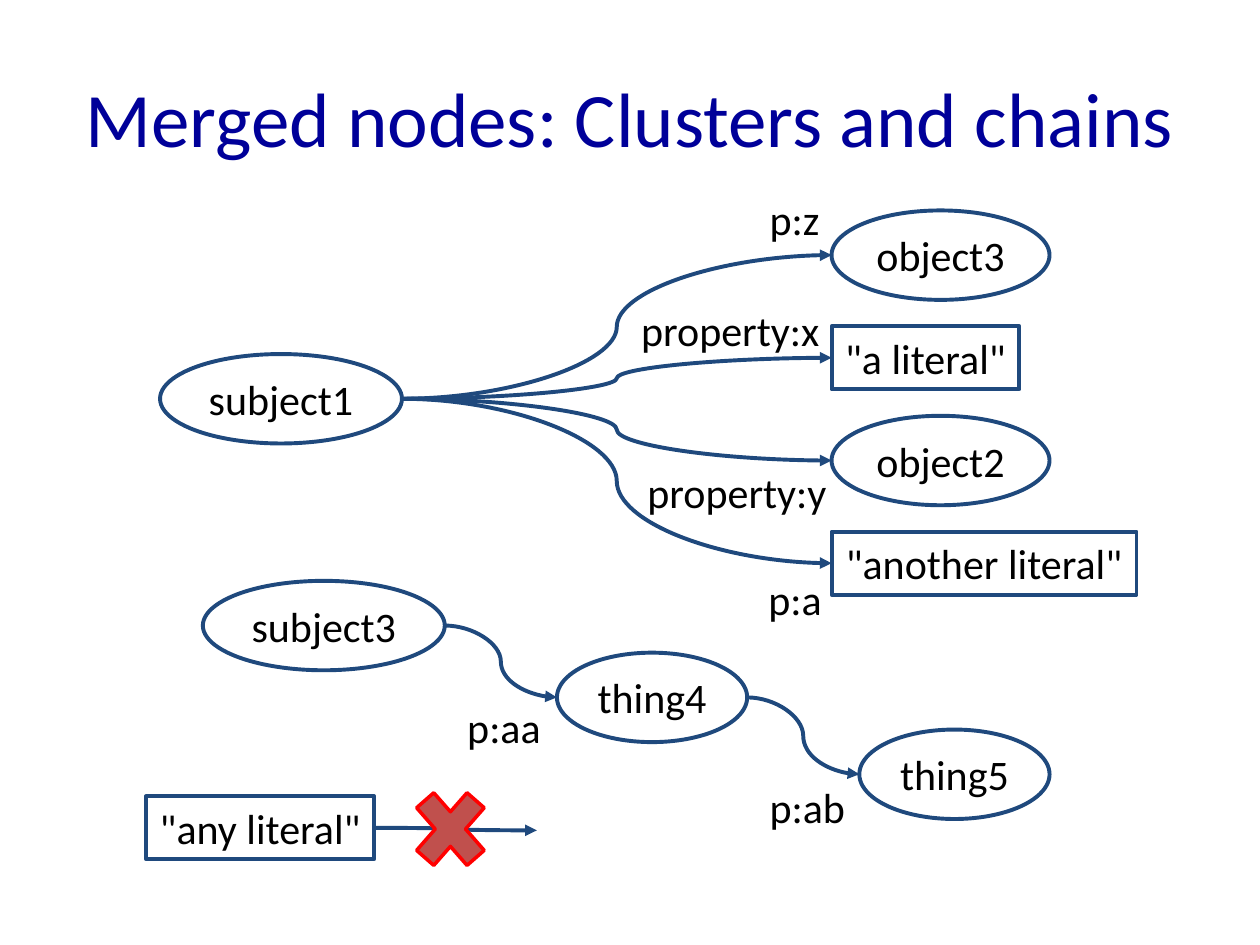
from dataclasses import dataclass

from lxml.etree import SubElement
from pptx import Presentation
from pptx.dml.color import RGBColor
from pptx.enum.shapes import MSO_CONNECTOR as Connector, MSO_SHAPE as Preset
from pptx.enum.text import MSO_ANCHOR as Anchor, MSO_AUTO_SIZE as AutoSize, PP_ALIGN as Align
from pptx.oxml.ns import qn
from pptx.util import Inches, Pt


@dataclass(frozen=True)
class Theme:
    font: str = "Calibri"
    title_size: float = 44
    text_size: float = 24
    outline_width: float = 2.25
    cross_width: float = 2
    title: str = "000099"
    text: str = "000000"
    outline: str = "1F497D"
    node: str = "FFFFFF"
    cross: str = "C0504D"
    cross_outline: str = "FF0000"


@dataclass(frozen=True)
class Node:
    """A resource (ellipse) or a literal (rectangle)."""
    text: str
    left: float
    top: float
    width: float
    is_literal: bool = False

    @property
    def height(self) -> float:
        return 0.5 if self.is_literal else 0.71

    @property
    def entry(self) -> tuple[float, float]:
        return self.left, self.top + self.height / 2

    @property
    def exit(self) -> tuple[float, float]:
        return self.left + self.width, self.top + self.height / 2


@dataclass(frozen=True)
class Label:
    text: str
    left: float
    top: float
    width: float


THEME = Theme()
OBJECT_LEFT = 6.6
LABEL_HEIGHT = 0.5

# Cluster: one subject with four objects
SUBJECT1 = Node("subject1", 1.27, 2.81, 1.92)
CLUSTER = [
    Node("object3", OBJECT_LEFT, 1.67, 1.73),
    Node('"a literal"', OBJECT_LEFT, 2.59, 1.49, True),
    Node("object2", OBJECT_LEFT, 3.3, 1.73),
    Node('"another literal"', OBJECT_LEFT, 4.22, 2.42, True),
]

# Chain: each object is the next subject
CHAIN = [
    Node("subject3", 1.61, 4.61, 1.92),
    Node("thing4", 4.42, 5.18, 1.51),
    Node("thing5", 6.82, 5.79, 1.51),
]

# A literal cannot be a subject
ANY_LITERAL = Node('"any literal"', 1.16, 6.32, 1.81, True)
DEAD_END = (4.26, 6.59)
CROSS_BOX = (3.19, 6.14, 0.77, 0.88)

LABELS = [
    Label("p:z", 6.01, 1.49, 0.6),
    Label("property:x", 4.99, 2.37, 1.63),
    Label("property:y", 5.04, 3.65, 1.64),
    Label("p:a", 6, 4.5, 0.63),
    Label("p:aa", 3.61, 5.52, 0.79),
    Label("p:ab", 6.01, 6.15, 0.81),
]


def write(frame, text: str, size: float, color: str, **formats) -> None:
    for name, value in formats.items():
        setattr(frame, name, value)
    frame.text = text
    font = frame.paragraphs[0].font
    for name, value in {"name": THEME.font, "size": Pt(size)}.items():
        setattr(font, name, value)
    font.color.rgb = RGBColor.from_string(color)


def set_line(line, color: str, width: float) -> None:
    line.color.rgb = RGBColor.from_string(color)
    line.width = Pt(width)


def add_preset(shapes, preset: Preset, box: tuple, fill: str, outline: str, width: float):
    shape = shapes.add_shape(preset, *map(Inches, box))
    shape.shadow.inherit = False
    shape.fill.solid()
    shape.fill.fore_color.rgb = RGBColor.from_string(fill)
    set_line(shape.line, outline, width)
    return shape


def add_node(shapes, node: Node) -> None:
    preset = Preset.RECTANGLE if node.is_literal else Preset.OVAL
    box = (node.left, node.top, node.width, node.height)
    shape = add_preset(shapes, preset, box, THEME.node, THEME.outline, THEME.outline_width)
    write(shape.text_frame, node.text, THEME.text_size, THEME.text, word_wrap=False,
          auto_size=AutoSize.SHAPE_TO_FIT_TEXT, vertical_anchor=Anchor.TOP)
    shape.text_frame.paragraphs[0].alignment = Align.CENTER


def add_label(shapes, label: Label) -> None:
    box = shapes.add_textbox(*map(Inches, (label.left, label.top, label.width, LABEL_HEIGHT)))
    write(box.text_frame, label.text, THEME.text_size, THEME.text, word_wrap=False,
          auto_size=AutoSize.SHAPE_TO_FIT_TEXT)


def add_arrow(shapes, start: tuple[float, float], end: tuple[float, float]) -> None:
    arrow = shapes.add_connector(Connector.CURVE, *map(Inches, start + end))
    set_line(arrow.line, THEME.outline, THEME.outline_width)
    properties = arrow._element.spPr
    SubElement(properties.find(qn("a:ln")), qn("a:tailEnd"), type="triangle")
    SubElement(properties, qn("a:effectLst"))


def main() -> None:
    deck = Presentation()
    deck.slide_width, deck.slide_height = Inches(10), Inches(7.5)
    slide = deck.slides.add_slide(deck.slide_layouts[5])
    shapes = slide.shapes

    # Title
    title_box = {"left": 0.5, "top": 0.3, "width": 9, "height": 1.25}
    for name, value in title_box.items():
        setattr(shapes.title, name, Inches(value))
    write(shapes.title.text_frame, "Merged nodes: Clusters and chains",
          THEME.title_size, THEME.title, vertical_anchor=Anchor.MIDDLE)

    # Nodes
    for node in [SUBJECT1, *CLUSTER, *CHAIN, ANY_LITERAL]:
        add_node(shapes, node)

    # Arrows
    for target in CLUSTER:
        add_arrow(shapes, SUBJECT1.exit, target.entry)
    for source, target in zip(CHAIN, CHAIN[1:]):
        add_arrow(shapes, source.exit, target.entry)
    add_arrow(shapes, ANY_LITERAL.exit, DEAD_END)

    # Property names
    for label in LABELS:
        add_label(shapes, label)

    # Cross over the forbidden arrow
    add_preset(shapes, Preset.MATH_MULTIPLY, CROSS_BOX, THEME.cross,
               THEME.cross_outline, THEME.cross_width)

    deck.save("out.pptx")


if __name__ == "__main__":
    main()
